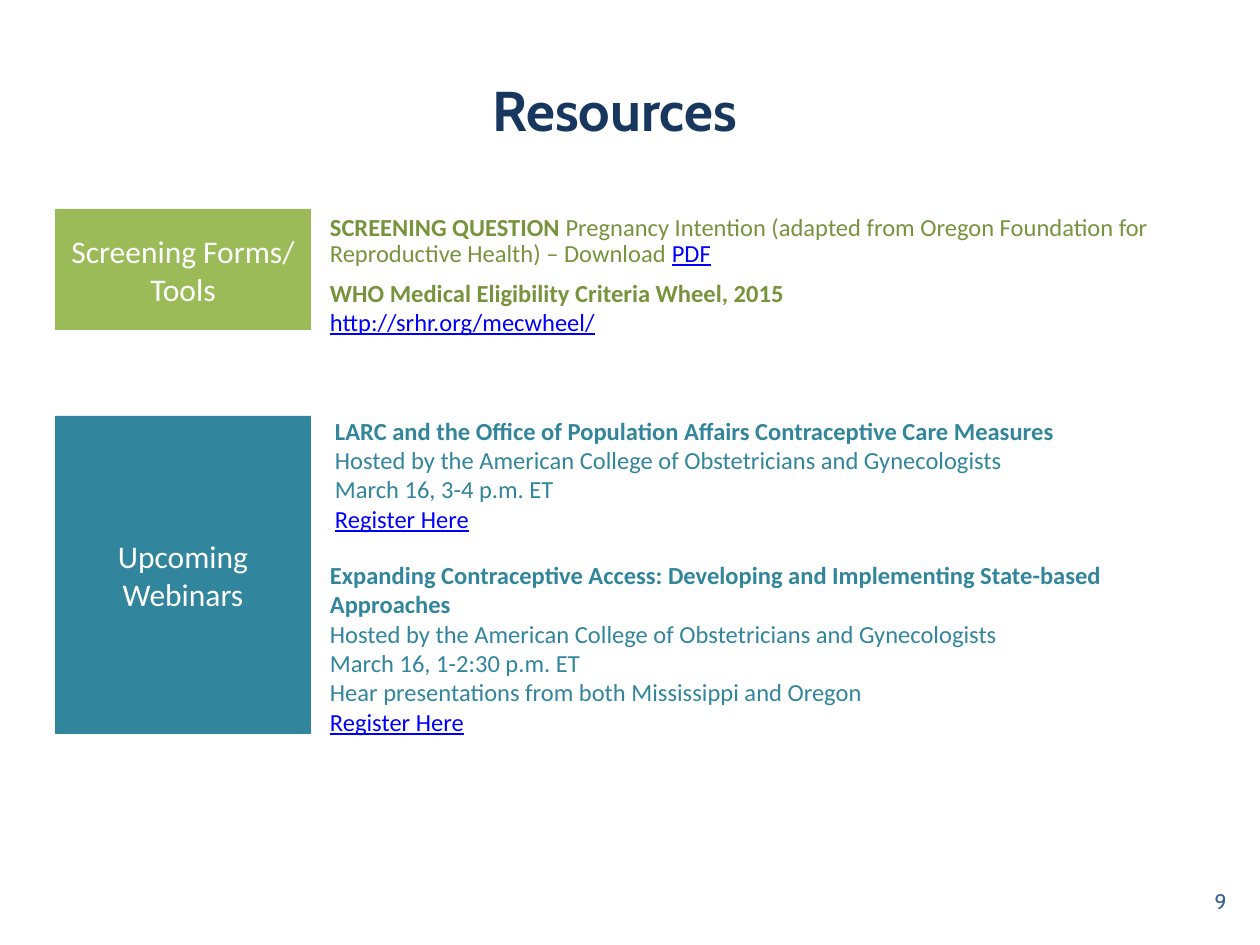
from pptx import Presentation
from pptx.dml.color import RGBColor
from pptx.enum.shapes import MSO_SHAPE
from pptx.enum.text import MSO_ANCHOR, PP_ALIGN
from pptx.util import Emu, Pt

PX = 914400 // 126
NAVY, BLUE, WHITE, LINK = "17375E", "376092", "FFFFFF", "0000FF"
GREEN, DARK_GREEN, TEAL = "9BBB59", "77933C", "31859C"
HOST = "Hosted by the American College of Obstetricians and Gynecologists"


def px(n):
    return Emu(n * PX)


def rgb(value):
    return RGBColor.from_string(value)


def add_run(p, text, color, size=14, **formats):
    r = p.add_run()
    r.text = text
    r.font.color.rgb = rgb(color)
    for name, value in {"name": "Calibri", "size": Pt(size), **formats}.items():
        setattr(r.font, name, value)


def set_frame(tf, anchor, inset=None):
    tf.word_wrap = True
    tf.vertical_anchor = anchor
    if inset is not None:
        for side in ("left", "top", "right", "bottom"):
            setattr(tf, f"margin_{side}", px(inset))


def add_line(slide, box, text, color, size, align, **formats):
    """One line of text in Cabin."""
    tf = slide.shapes.add_textbox(*map(px, box)).text_frame
    set_frame(tf, MSO_ANCHOR.MIDDLE)
    p = tf.paragraphs[0]
    p.alignment = align
    add_run(p, text, color, size, name="Cabin", **formats)


def add_label(slide, box, text, fill):
    """Filled category block with centred white text."""
    s = slide.shapes.add_shape(MSO_SHAPE.RECTANGLE, *map(px, box))
    s.shadow.inherit = False
    s.fill.solid()
    s.fill.fore_color.rgb = rgb(fill)
    s.line.fill.background()
    set_frame(s.text_frame, MSO_ANCHOR.MIDDLE)
    p = s.text_frame.paragraphs[0]
    p.alignment = PP_ALIGN.CENTER
    add_run(p, text, WHITE, 18)


def add_details(slide, box, paragraphs, color, anchor):
    """Paragraphs of (text, style) runs; style is bold, plain or link."""
    styles = {
        "bold": {"color": color, "bold": True},
        "plain": {"color": color},
        "link": {"color": LINK, "underline": True},
    }
    tf = slide.shapes.add_textbox(*map(px, box)).text_frame
    set_frame(tf, anchor, inset=6)
    for i, runs in enumerate(paragraphs):
        p = tf.add_paragraph() if i else tf.paragraphs[0]
        for text, style in runs:
            add_run(p, text, **styles[style])
    return tf


def add_webinar(slide, box, title, *lines):
    paragraphs = [[(title, "bold")], [(HOST, "plain")]]
    paragraphs += [[(line, "plain")] for line in lines]
    paragraphs.append([("Register Here", "link")])
    add_details(slide, box, paragraphs, TEAL, MSO_ANCHOR.MIDDLE)


def main():
    prs = Presentation()
    prs.slide_width, prs.slide_height = px(1260), px(945)
    slide = prs.slides.add_slide(prs.slide_layouts[6])

    # Title and page number
    add_line(slide, (48, 59, 1134, 100), "Resources", NAVY, 32,
             PP_ALIGN.CENTER, bold=True)
    add_line(slide, (945, 876, 294, 50), "9", BLUE, 12, PP_ALIGN.RIGHT)

    # Screening forms
    add_label(slide, (55, 209, 256, 121), "Screening Forms/ Tools", GREEN)
    tf = add_details(slide, (324, 209, 882, 140), [
        [("SCREENING QUESTION ", "bold"),
         ("Pregnancy Intention (adapted from Oregon Foundation for "
          "Reproductive Health) – Download ", "plain"),
         ("PDF", "link")],
        [("WHO Medical Eligibility Criteria Wheel, 2015", "bold")],
        [("http://srhr.org/mecwheel/", "link")],
    ], DARK_GREEN, MSO_ANCHOR.TOP)
    tf.paragraphs[0].line_spacing = 0.9
    tf.paragraphs[0].space_after = Pt(5.5)

    # Webinars
    add_label(slide, (55, 416, 256, 318), "Upcoming Webinars", TEAL)
    add_webinar(slide, (329, 405, 882, 139),
                "LARC and the Office of Population Affairs Contraceptive "
                "Care Measures",
                "March 16, 3-4 p.m. ET")
    add_webinar(slide, (324, 547, 906, 202),
                "Expanding Contraceptive Access: Developing and Implementing "
                "State-based Approaches",
                "March 16, 1-2:30 p.m. ET",
                "Hear presentations from both Mississippi and Oregon")

    prs.save("out.pptx")


if __name__ == "__main__":
    main()
